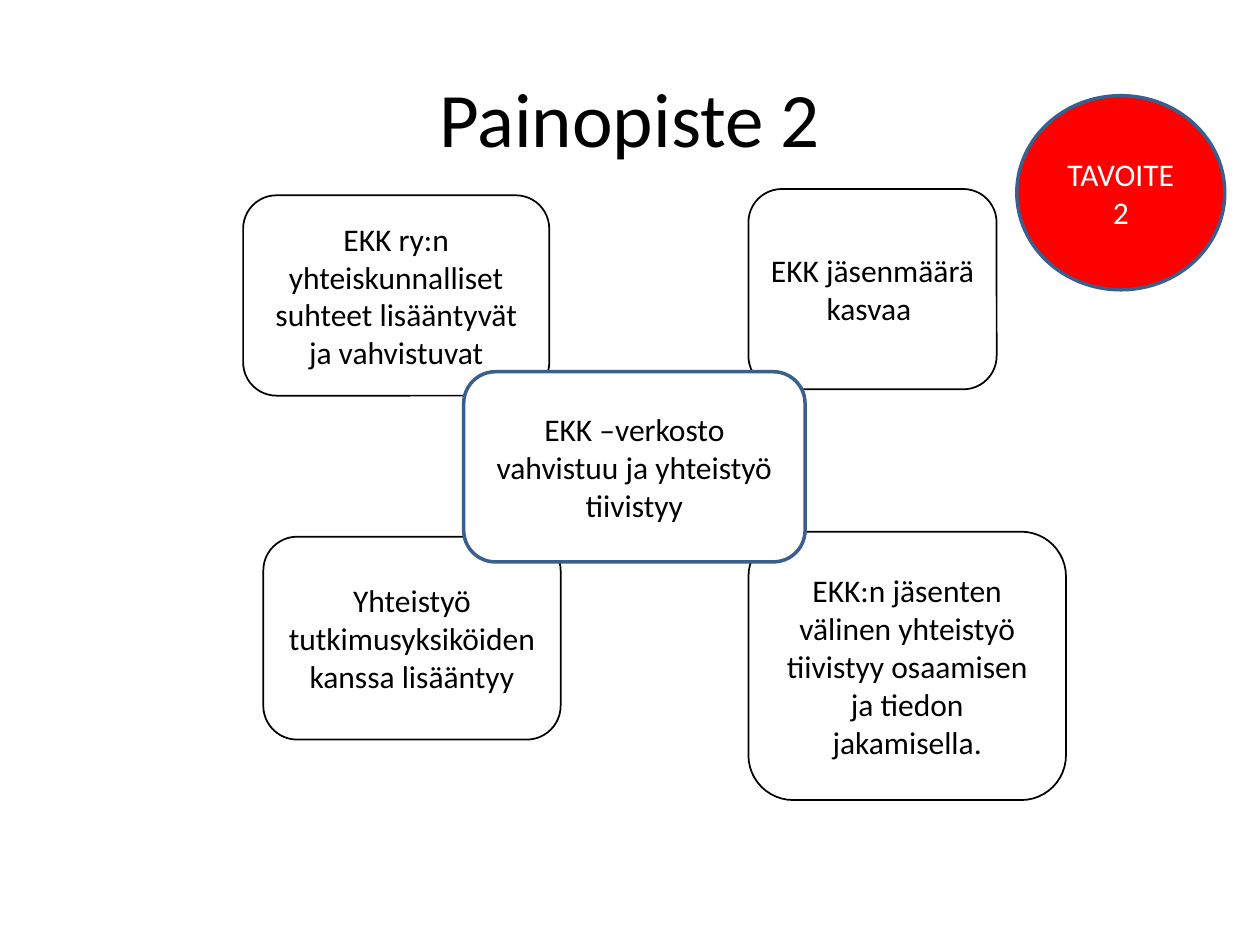
from pptx import Presentation
from pptx.dml.color import RGBColor
from pptx.enum.shapes import MSO_SHAPE as Shape
from pptx.enum.text import MSO_ANCHOR as Anchor, PP_ALIGN as Align
from pptx.util import Inches, Pt

COLORS = {"black": "000000", "white": "FFFFFF", "red": "FF0000", "blue": "3A5F8C"}


def color(name):
    return RGBColor.from_string(COLORS[name])


def write(holder, wording, size, ink):
    frame = holder.text_frame
    frame.word_wrap = True
    frame.vertical_anchor = Anchor.MIDDLE
    paragraph = frame.paragraphs[0]
    paragraph.alignment = Align.CENTER
    run = paragraph.add_run()
    run.text = wording
    run.font.color.rgb = color(ink)
    for key, value in {"name": "Calibri", "size": Pt(size)}.items():
        setattr(run.font, key, value)


deck = Presentation()
deck.slide_width = Inches(10)
deck.slide_height = Inches(7.5)
slide = deck.slides.add_slide(deck.slide_layouts[6])

goal = {"kind": Shape.ROUNDED_RECTANGLE, "fill": "white", "line": "black", "width": 1, "ink": "black"}
core = goal | {"line": "blue", "width": 2}
badge = core | {"kind": Shape.OVAL, "fill": "red", "ink": "white"}

items = [
    (goal, (1.93, 1.55, 2.43, 1.59), "EKK ry:n yhteiskunnalliset suhteet lisääntyvät ja vahvistuvat"),
    (goal, (5.94, 4.22, 2.52, 2.13), "EKK:n jäsenten välinen yhteistyö tiivistyy osaamisen ja tiedon jakamisella."),
    (goal, (5.94, 1.5, 1.97, 1.59), "EKK jäsenmäärä kasvaa "),
    (goal, (2.09, 4.26, 2.36, 1.61), "Yhteistyö tutkimusyksiköiden kanssa lisääntyy"),
    (core, (3.68, 2.95, 2.71, 1.51), "EKK –verkosto vahvistuu ja yhteistyö tiivistyy"),
    (badge, (8.07, 0.76, 1.65, 1.54), "TAVOITE 2"),
]

for style, place, wording in items:
    bubble = slide.shapes.add_shape(style["kind"], *map(Inches, place))
    bubble.shadow.inherit = False
    bubble.fill.solid()
    bubble.fill.fore_color.rgb = color(style["fill"])
    bubble.line.color.rgb = color(style["line"])
    bubble.line.width = Pt(style["width"])
    write(bubble, wording, 18, style["ink"])

heading = slide.shapes.add_textbox(Inches(0.5), Inches(0.3), Inches(9), Inches(1.25))
write(heading, "Painopiste 2", 44, "black")

deck.save("out.pptx")
